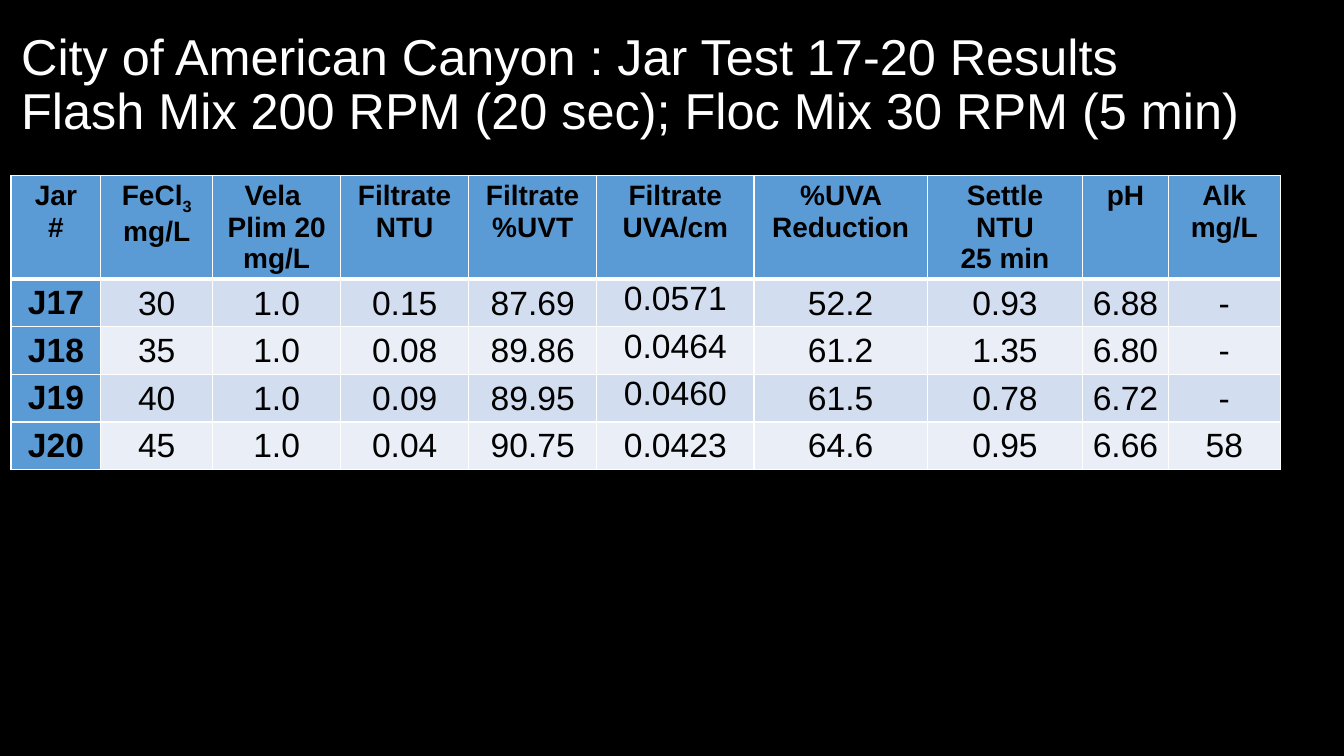
from dataclasses import dataclass

from lxml.etree import SubElement
from pptx import Presentation
from pptx.dml.color import RGBColor as RGB
from pptx.enum.text import MSO_ANCHOR as Anchor, MSO_AUTO_SIZE as AutoSize, PP_ALIGN as Align
from pptx.oxml.ns import qn
from pptx.util import Pt

PX = 9144  # 100 px to the inch


@dataclass(frozen=True)
class Theme:
    font: str = "Arial"
    background: str = "000000"
    title: str = "FFFFFF"
    ink: str = "000000"
    rule: str = "FFFFFF"
    header: str = "5B9BD5"
    bands: tuple = ("D2DEEF", "EAEFF7")
    title_size: int = 36
    header_size: int = 20
    body_size: int = 24


THEME = Theme()
SUBSCRIPT = "3"
HEADERS = ["Jar\n#", "FeCl\nmg/L", "Vela \nPlim 20\nmg/L", "Filtrate\nNTU", "Filtrate\n%UVT",
           "Filtrate\nUVA/cm", "%UVA Reduction", "Settle\nNTU\n25 min", "pH", "Alk\nmg/L"]
RESULTS = [
    ["J17", "30", "1.0", "0.15", "87.69", "0.0571", "52.2", "0.93", "6.88", "-"],
    ["J18", "35", "1.0", "0.08", "89.86", "0.0464", "61.2", "1.35", "6.80", "-"],
    ["J19", "40", "1.0", "0.09", "89.95", "0.0460", "61.5", "0.78", "6.72", "-"],
    ["J20", "45", "1.0", "0.04", "90.75", "0.0423", "64.6", "0.95", "6.66", "58"],
]
COLUMN_WIDTHS = [89, 111, 127, 127, 127, 156, 172, 154, 85, 111]
ROW_HEIGHTS = [55, 41, 41, 41, 41]
FECL_COLUMN, UVA_COLUMN = 1, 5


def style_run(run, size, color, bold=False):
    run.font.name = THEME.font
    run.font.size = Pt(size)
    run.font.bold = bold
    run.font.color.rgb = RGB.from_string(color)


def rule_cell(cell, top, bottom):
    """Draw the four borders of a cell; top and bottom are widths in points."""
    properties = cell._tc.get_or_add_tcPr()
    for place, (side, width) in enumerate((("L", 1), ("R", 1), ("T", top), ("B", bottom))):
        line = SubElement(properties, qn(f"a:ln{side}"), w=str(Pt(width)))
        SubElement(SubElement(line, qn("a:solidFill")), qn("a:srgbClr"), val=THEME.rule)
        properties.insert(place, line)


deck = Presentation()
deck.slide_width, deck.slide_height = 1333 * PX, 750 * PX
slide = deck.slides.add_slide(deck.slide_layouts[5])
slide.background.fill.solid()
slide.background.fill.fore_color.rgb = RGB.from_string(THEME.background)

title = slide.shapes.title
title.left, title.top, title.width, title.height = 11 * PX, 13 * PX, 1280 * PX, 145 * PX
title.text_frame.text = ("City of American Canyon : Jar Test 17-20 Results\v"
                         "Flash Mix 200 RPM (20 sec); Floc Mix 30 RPM (5 min)")
title.text_frame.auto_size = AutoSize.NONE
title.text_frame.vertical_anchor = Anchor.MIDDLE
heading = title.text_frame.paragraphs[0]
heading.alignment = Align.LEFT
heading.line_spacing = 0.9
for run in heading.runs:
    style_run(run, THEME.title_size, THEME.title)

table_frame = slide.shapes.add_table(
    len(ROW_HEIGHTS), len(COLUMN_WIDTHS), 11 * PX, 174 * PX,
    sum(COLUMN_WIDTHS) * PX, sum(ROW_HEIGHTS) * PX)
jar_table = table_frame.table
jar_table.first_col = True
for column, width in zip(jar_table.columns, COLUMN_WIDTHS):
    column.width = width * PX
for row, height in zip(jar_table.rows, ROW_HEIGHTS):
    row.height = height * PX
table_frame.height = 310 * PX

for r, values in enumerate([HEADERS, *RESULTS]):
    for c, value in enumerate(values):
        cell = jar_table.cell(r, c)
        is_header, is_label = r == 0, r == 0 or c == 0
        cell.text_frame.text = value
        if is_header and c == FECL_COLUMN:
            subscript = cell.text_frame.paragraphs[0].add_run()
            subscript.text = SUBSCRIPT
            subscript.font._element.set("baseline", "-25000")
        for paragraph in cell.text_frame.paragraphs:
            paragraph.alignment = Align.CENTER
            for run in paragraph.runs:
                style_run(run, THEME.header_size if is_header else THEME.body_size,
                          THEME.ink, bold=is_label)
        if not is_label:
            cell.margin_left = cell.margin_right = cell.margin_top = PX
            cell.margin_bottom = 0
            top_aligned = c == UVA_COLUMN and r < len(RESULTS)
            cell.vertical_anchor = Anchor.TOP if top_aligned else Anchor.MIDDLE
        cell.fill.solid()
        cell.fill.fore_color.rgb = RGB.from_string(
            THEME.header if is_label else THEME.bands[(r - 1) % 2])
        rule_cell(cell, top=3 if r == 1 else 1, bottom=3 if is_header else 1)

deck.save("out.pptx")
